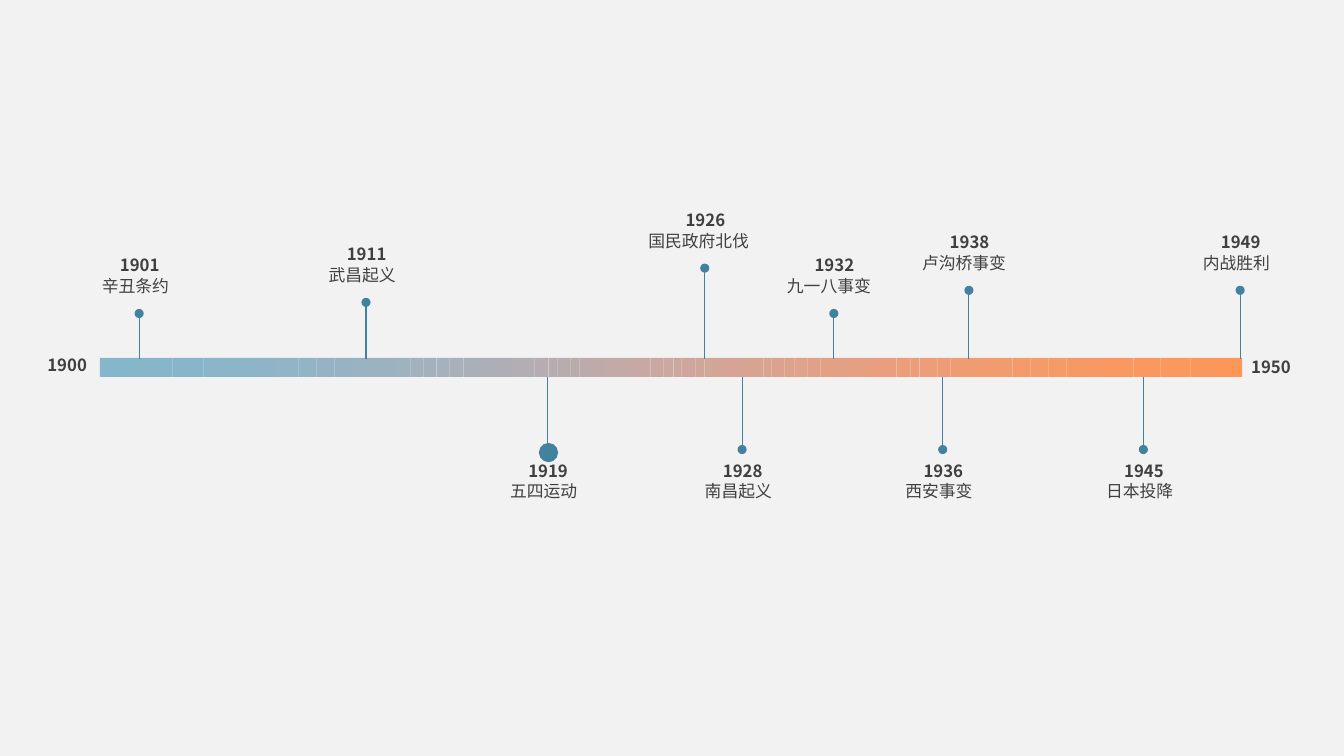
from dataclasses import dataclass

from lxml import etree
from pptx import Presentation
from pptx.dml.color import RGBColor
from pptx.enum.shapes import MSO_CONNECTOR, MSO_SHAPE
from pptx.enum.text import MSO_AUTO_SIZE
from pptx.oxml.ns import qn
from pptx.util import Emu, Inches, Pt

RECT, OVAL = MSO_SHAPE.RECTANGLE, MSO_SHAPE.OVAL
STRAIGHT = MSO_CONNECTOR.STRAIGHT
GROW = MSO_AUTO_SIZE.SHAPE_TO_FIT_TEXT
UNIT = Inches(0.01)
COLS, ROWS = 1333, 750


@dataclass(frozen=True)
class Theme:
    font: str = "Noto Sans CJK JP"
    size: float = 12
    line: float = 0.75
    back: str = "F2F2F2"
    text: str = "404040"
    accent: str = "42829E"
    ramp: tuple = ("85B6CC", "A9B0BA", "CDA79F", "EA9E7D", "FD9759")

    def shade(self, share):
        place = share * (len(self.ramp) - 1)
        i = min(int(place), len(self.ramp) - 2)
        low, high = (RGBColor.from_string(c) for c in self.ramp[i:i + 2])
        return RGBColor(*(round(a + (b - a) * (place - i)) for a, b in zip(low, high)))


BAR_LEFT, BAR_TOP, BAR_HEIGHT = 99, 355, 19
BAR_WIDTHS = (
    36, 36, 31, 27, 26, 18, 23, 18, 18, 16, 14, 13, 18, 14, 13, 13, 13, 14, 8,
    13, 13, 15, 8, 13, 14, 9, 13, 9, 13, 13, 9, 14, 8, 13, 13, 10, 8, 14, 9, 8,
    15, 13, 13, 9, 8, 13, 10, 13, 13, 9, 14, 13, 13, 13, 13, 14, 9, 18, 13, 13,
    17, 14, 17, 18, 18, 18, 18, 22, 26, 27, 30, 36, 15,
)
STEM_ABOVE, STEM_BELOW = 356, 374
DOT, BIG_DOT = 8, 18
YEAR_WIDTH, GLYPH_WIDTH, TEXT_HEIGHT = 40, 19, 23
EVENTS = (
    ("1901", "辛丑条约", 138, 311, DOT),
    ("1911", "武昌起义", 363, 300, DOT),
    ("1919", "五四运动", 543, 446, BIG_DOT),
    ("1926", "国民政府北伐", 699, 266, DOT),
    ("1928", "南昌起义", 736, 446, DOT),
    ("1932", "九一八事变", 827, 311, DOT),
    ("1936", "西安事变", 935, 446, DOT),
    ("1938", "卢沟桥事变", 961, 288, DOT),
    ("1945", "日本投降", 1134, 446, DOT),
    ("1949", "内战胜利", 1230, 288, DOT),
)
ENDS = (("1900", 47, 352), ("1950", 1241, 354))


class Timeline:
    def __init__(self, prs, theme):
        self.theme = theme
        self.s = prs.slides.add_slide(prs.slide_layouts[6])
        fill = self.s.background.fill
        fill.solid()
        fill.fore_color.rgb = RGBColor.from_string(theme.back)
        self.accent = RGBColor.from_string(theme.accent)

    def grid(self, *cells):
        return [Emu(round(c * UNIT)) for c in cells]

    def shape(self, kind, color, *cells):
        sp = self.s.shapes.add_shape(kind, *self.grid(*cells))
        sp.shadow.inherit = False
        sp.fill.solid()
        sp.fill.fore_color.rgb = color
        sp.line.fill.background()
        return sp

    def bar(self):
        left, last = BAR_LEFT, len(BAR_WIDTHS) - 1
        for i, width in enumerate(BAR_WIDTHS):
            self.shape(RECT, self.theme.shade(i / last), left, BAR_TOP, width, BAR_HEIGHT)
            left += width

    def stem(self, x, start, end):
        cx = self.s.shapes.add_connector(STRAIGHT, *self.grid(x, start, x, end))
        cx.line.color.rgb = self.accent
        cx.line.width = Pt(self.theme.line)
        etree.SubElement(cx._element.spPr, qn("a:effectLst"))

    def dot(self, x, y, size):
        sp = self.shape(OVAL, self.accent, x - size / 2, y - size / 2, size, size)
        sp.line.color.rgb = self.accent
        sp.line.width = Pt(self.theme.line)

    def label(self, text, left, top, width, bold=False):
        box = self.s.shapes.add_textbox(*self.grid(left, top, width, TEXT_HEIGHT))
        tf = box.text_frame
        tf.margin_left = tf.margin_right = tf.margin_top = tf.margin_bottom = 0
        tf.word_wrap = False
        tf.auto_size = GROW
        p = tf.paragraphs[0]
        p.text = text
        p.font.size = Pt(self.theme.size)
        p.font.bold = bold
        p.font.color.rgb = RGBColor.from_string(self.theme.text)
        p.font.name = self.theme.font
        props = p._p.pPr.find(qn("a:defRPr"))
        etree.SubElement(props, qn("a:ea")).set("typeface", self.theme.font)

    def event(self, year, name, x, y, size):
        above = y < BAR_TOP
        self.stem(x, STEM_ABOVE if above else STEM_BELOW, y)
        if size == BIG_DOT:
            self.dot(x + 1, y + 3, size)
        else:
            self.dot(x, y, size)
        year_top, name_top = (y - 58, y - 37) if above else (y + 11, y + 31)
        name_width = GLYPH_WIDTH * len(name)
        self.label(year, x + 1 - YEAR_WIDTH / 2, year_top, YEAR_WIDTH, bold=True)
        self.label(name, x + 1 - name_width / 2, name_top, name_width)


def main():
    prs = Presentation()
    prs.slide_width, prs.slide_height = COLS * UNIT, ROWS * UNIT
    timeline = Timeline(prs, Theme())
    timeline.bar()
    for event in EVENTS:
        timeline.event(*event)
    for year, left, top in ENDS:
        timeline.label(year, left, top, YEAR_WIDTH, bold=True)
    prs.save("out.pptx")


if __name__ == "__main__":
    main()
